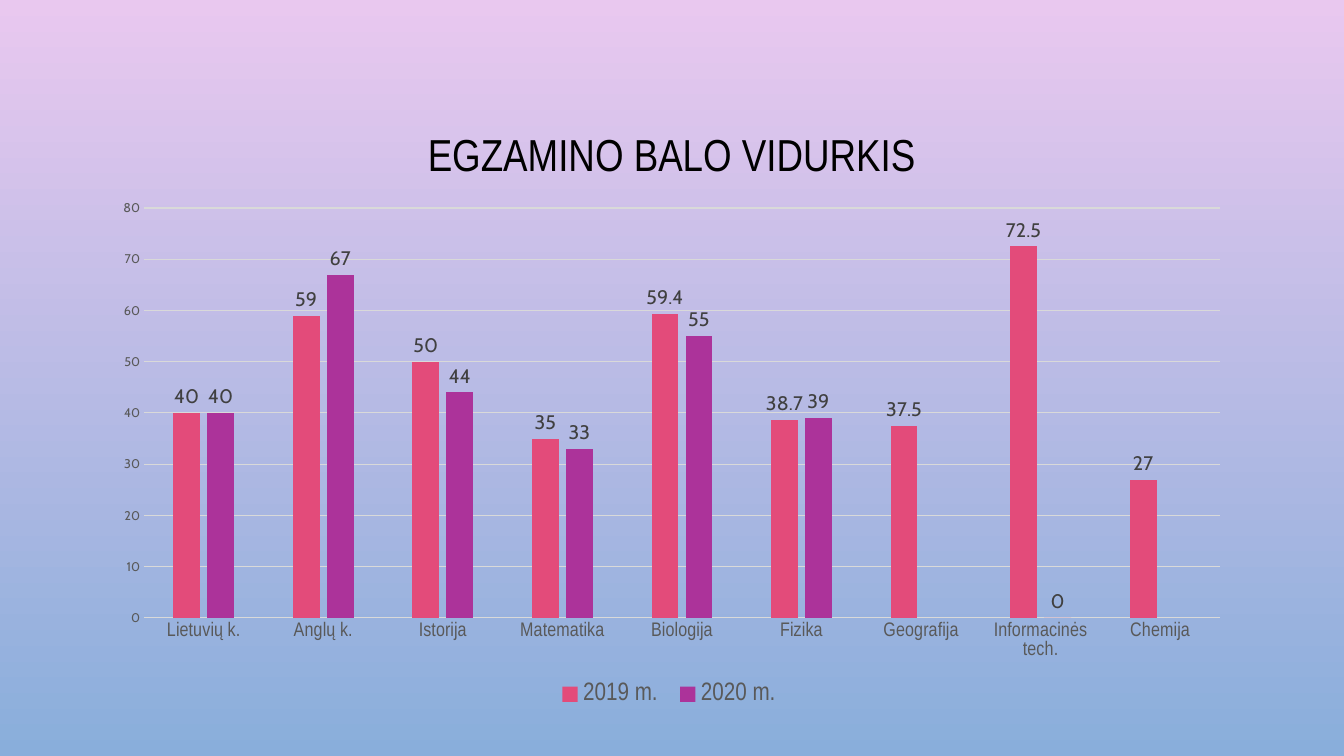
"""Build a slide comparing average exam scores per subject in 2019 and 2020."""
from lxml.etree import SubElement
from pptx import Presentation
from pptx.chart.data import CategoryChartData
from pptx.dml.color import RGBColor
from pptx.enum.chart import XL_CHART_TYPE as ChartType
from pptx.enum.chart import XL_LABEL_POSITION as LabelPosition
from pptx.enum.chart import XL_LEGEND_POSITION as LegendPosition
from pptx.enum.chart import XL_TICK_MARK as TickMark
from pptx.enum.text import MSO_ANCHOR, PP_ALIGN
from pptx.oxml.ns import qn
from pptx.util import Pt

HEADING = "EGZAMINO BALO VIDURKIS"
SUBJECTS = ["Lietuvių k.", "Anglų k.", "Istorija", "Matematika", "Biologija",
            "Fizika", "Geografija", "Informacinės tech.", "Chemija"]
YEARS = [
    ("2019 m. ", "year_2019", [40, 59, 50, 35, 59.4, 38.7, 37.5, 72.5, 27]),
    ("2020 m. ", "year_2020", [40, 67, 44, 33, 55, 39, None, 0, None]),
]
COLORS = {
    "sky_top": "E9C8EF", "sky_bottom": "89AEDB", "black": "000000",
    "axis_text": "595959", "label_text": "404040", "grid": "D9D9D9",
    "year_2019": "E34B7A", "year_2020": "AC339A",
}
NARROW, ROUND = "Arial Narrow", "Cabin"

SLIDE_SIZE = (1344, 756)
TITLE_BOX = (101, 69, 1142, 176)
CHART_BOX = (101, 190, 1142, 521)
PLOT_BOX = (144, 208, 1076, 410)


def px(length):
    return round(length * 914400 / 100.8)


def color(name):
    return RGBColor.from_string(COLORS[name])


def set_font(font, size, name, color_name):
    font.size = Pt(size)
    font.name = name
    font.bold = False
    font.color.rgb = color(color_name)


def set_line(line):
    line.color.rgb = color("grid")
    line.width = Pt(0.75)


def place_plot(chart):
    plot_area = chart.plots[0]._element.getparent()
    for old_layout in plot_area.findall(qn("c:layout")):
        plot_area.remove(old_layout)
    layout = SubElement(plot_area, qn("c:layout"))
    plot_area.insert(0, layout)
    manual = SubElement(layout, qn("c:manualLayout"))
    left, top, width, height = PLOT_BOX
    chart_left, chart_top, chart_width, chart_height = CHART_BOX
    settings = [
        ("layoutTarget", "inner"), ("xMode", "edge"), ("yMode", "edge"),
        ("x", (left - chart_left) / chart_width),
        ("y", (top - chart_top) / chart_height),
        ("w", width / chart_width), ("h", height / chart_height),
    ]
    for tag, value in settings:
        SubElement(manual, qn(f"c:{tag}")).set("val", str(value))


def add_heading(slide):
    title = slide.shapes.title
    title.left, title.top, title.width, title.height = map(px, TITLE_BOX)
    title.text_frame.text = HEADING
    title.text_frame.vertical_anchor = MSO_ANCHOR.MIDDLE
    paragraph = title.text_frame.paragraphs[0]
    paragraph.alignment = PP_ALIGN.CENTER
    paragraph.line_spacing = 0.9
    set_font(paragraph.font, 32, NARROW, "black")


def add_score_chart(slide):
    scores = CategoryChartData()
    scores.categories = SUBJECTS
    for year, _, values in YEARS:
        scores.add_series(year, values)
    chart = slide.shapes.add_chart(
        ChartType.COLUMN_CLUSTERED, *map(px, CHART_BOX), scores).chart
    set_font(chart.font, 10, ROUND, "black")
    chart.has_title = False
    chart.has_legend = True
    chart.legend.position = LegendPosition.BOTTOM
    chart.legend.include_in_layout = False
    set_font(chart.legend.font, 18, NARROW, "axis_text")

    bars = chart.plots[0]
    bars.gap_width, bars.overlap = 219, -27
    bars.vary_by_categories = False
    for series, (_, color_name, _) in zip(bars.series, YEARS):
        series.format.fill.solid()
        series.format.fill.fore_color.rgb = color(color_name)
        series.invert_if_negative = False
        labels = series.data_labels
        labels.show_value = True
        labels.position = LabelPosition.OUTSIDE_END
        set_font(labels.font, 14, ROUND, "label_text")

    subject_axis, score_axis = chart.category_axis, chart.value_axis
    for axis, size, font_name in ((subject_axis, 14, NARROW), (score_axis, 9, ROUND)):
        axis.major_tick_mark = axis.minor_tick_mark = TickMark.NONE
        set_font(axis.tick_labels.font, size, font_name, "axis_text")
    set_line(subject_axis.format.line)
    score_axis.format.line.fill.background()
    score_axis.minimum_scale, score_axis.maximum_scale = 0, 80
    score_axis.major_unit = 10
    score_axis.has_major_gridlines = True
    set_line(score_axis.major_gridlines.format.line)
    place_plot(chart)


def main():
    deck = Presentation()
    deck.slide_width, deck.slide_height = map(px, SLIDE_SIZE)
    slide = deck.slides.add_slide(deck.slide_layouts[5])
    sky = slide.background.fill
    sky.gradient()
    sky.gradient_angle = 270
    for stop, position, name in zip(sky.gradient_stops, (0, 1), ("sky_top", "sky_bottom")):
        stop.position = position
        stop.color.rgb = color(name)
    add_heading(slide)
    add_score_chart(slide)
    deck.save("out.pptx")


if __name__ == "__main__":
    main()
